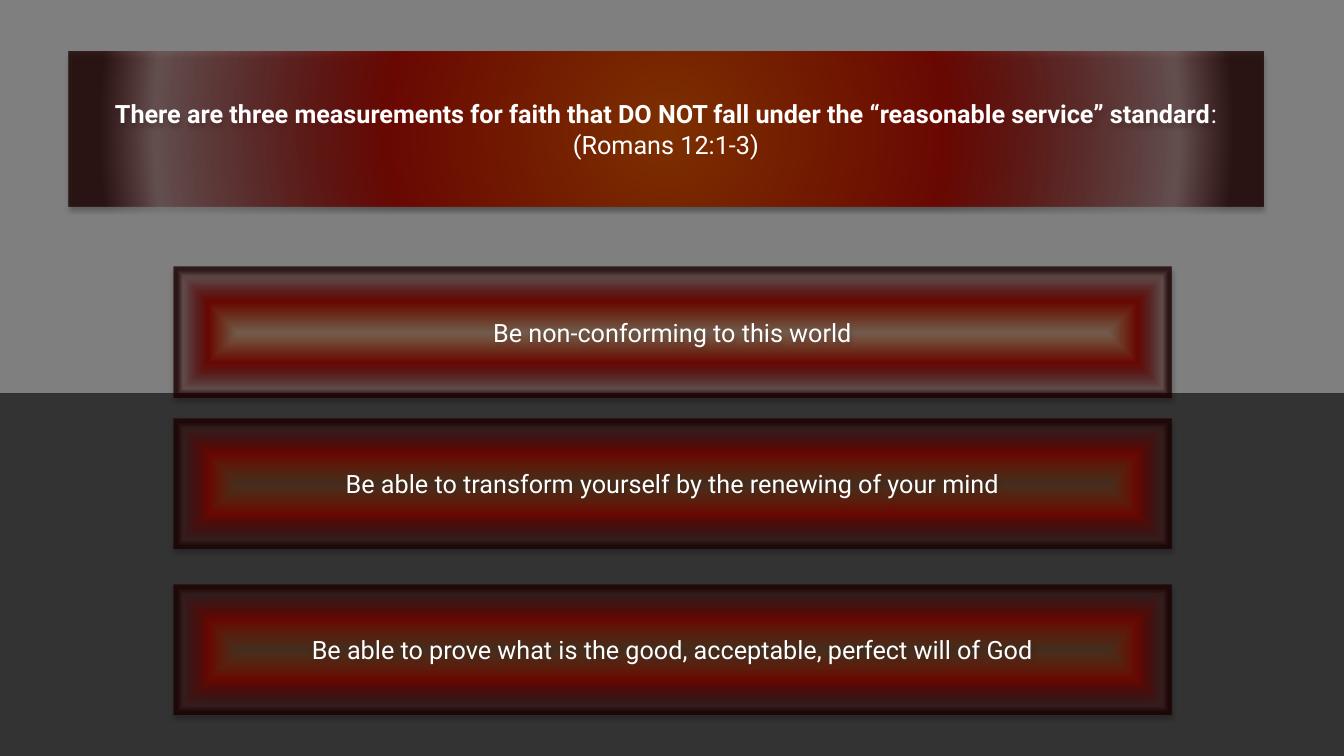
import lxml.etree
import pptx
import pptx.dml.color
import pptx.enum.shapes
import pptx.enum.text
import pptx.oxml
import pptx.oxml.ns
import pptx.util

BLACK = pptx.dml.color.RGBColor(0x00, 0x00, 0x00)
WHITE = pptx.dml.color.RGBColor(0xFF, 0xFF, 0xFF)
AMBER = pptx.dml.color.RGBColor(0x7D, 0x30, 0x00)
RED = pptx.dml.color.RGBColor(0x69, 0x08, 0x02)
MAROON = pptx.dml.color.RGBColor(0x43, 0x00, 0x00)
DARK = pptx.dml.color.RGBColor(0x1B, 0x00, 0x00)

OUTER_STOPS = [(46, RED, 100), (85, MAROON, 30), (94, DARK, 78)]
TITLE_STOPS = [(0, AMBER, 100)] + OUTER_STOPS
PANEL_STOPS = [(0, AMBER, 29)] + OUTER_STOPS

MEASUREMENTS = [
    (35.33, "Be non-conforming to this world"),
    (55.33, "Be able to transform yourself by the renewing of your mind"),
    (77.33, "Be able to prove what is the good, acceptable, perfect will of God"),
]


class FaithSlide:
    """Holds the style and the current page, with lengths in percent of the page."""

    font_name = "Roboto"
    font_size = pptx.util.Pt(18)

    def __init__(self, deck):
        self.width, self.height = deck.slide_width, deck.slide_height
        self.page = deck.slides.add_slide(deck.slide_layouts[5])

    def place(self, left, top, width, height):
        return (
            round(self.width * left / 100),
            round(self.height * top / 100),
            round(self.width * width / 100),
            round(self.height * height / 100),
        )

    def rectangle(self, *area):
        box = self.page.shapes.add_shape(
            pptx.enum.shapes.MSO_SHAPE.RECTANGLE, *self.place(*area)
        )
        box.line.fill.background()
        box.shadow.inherit = False
        return box

    def band(self, top, height, opacity):
        box = self.rectangle(0, top, 100, height)
        box.fill.solid()
        box.fill.fore_color.rgb = BLACK
        color = box.element.spPr.find(".//" + pptx.oxml.ns.qn("a:srgbClr"))
        alpha = lxml.etree.SubElement(color, pptx.oxml.ns.qn("a:alpha"))
        alpha.set("val", str(opacity * 1000))

    def glow(self, box, stops, shape):
        namespace = pptx.oxml.ns.nsdecls("a")
        stop_xml = "".join(
            f'<a:gs pos="{position * 1000}"><a:srgbClr val="{color}">'
            f'<a:alpha val="{opacity * 1000}"/></a:srgbClr></a:gs>'
            for position, color, opacity in stops
        )
        gradient = pptx.oxml.parse_xml(
            f'<a:gradFill {namespace} rotWithShape="1"><a:gsLst>{stop_xml}</a:gsLst>'
            f'<a:path path="{shape}"><a:fillToRect l="50000" t="50000" '
            'r="50000" b="50000"/></a:path></a:gradFill>'
        )
        shadow = pptx.oxml.parse_xml(
            f'<a:outerShdw {namespace} blurRad="{pptx.util.Pt(3.5)}" '
            f'dist="{pptx.util.Pt(2.2)}" dir="5400000" rotWithShape="0">'
            f'<a:srgbClr val="{BLACK}"><a:alpha val="32000"/></a:srgbClr></a:outerShdw>'
        )
        box.fill.background()
        properties = box.element.spPr
        properties.replace(properties.find(pptx.oxml.ns.qn("a:noFill")), gradient)
        box.shadow.inherit = False
        properties.find(pptx.oxml.ns.qn("a:effectLst")).append(shadow)

    def caption(self, box, lines):
        frame = box.text_frame
        frame.text = "\n".join(lines)
        frame.word_wrap = True
        frame.auto_size = pptx.enum.text.MSO_AUTO_SIZE.NONE
        frame.vertical_anchor = pptx.enum.text.MSO_ANCHOR.MIDDLE
        for para in frame.paragraphs:
            para.alignment = pptx.enum.text.PP_ALIGN.CENTER
            para.font.name = self.font_name
            para.font.size = self.font_size
            para.font.color.rgb = WHITE

    def title(self, area, heading, ending, reference):
        box = self.page.shapes.title
        box.left, box.top, box.width, box.height = self.place(*area)
        self.glow(box, TITLE_STOPS, "circle")
        self.caption(box, [heading, reference])
        para = box.text_frame.paragraphs[0]
        para.runs[0].font.bold = True
        span = para.add_run()
        span.text = ending
        box.element.getparent().append(box.element)

    def panel(self, top, text):
        box = self.rectangle(12.9, top, 74.27, 17.2)
        self.glow(box, PANEL_STOPS, "rect")
        self.caption(box, [text])


def main():
    deck = pptx.Presentation()
    deck.slide_width = pptx.util.Inches(13.33)
    deck.slide_height = pptx.util.Inches(7.5)
    slide = FaithSlide(deck)
    slide.band(0, 52, 50)
    slide.band(52, 48, 80)
    slide.title(
        (5.1, 6.8, 88.9, 20.53),
        "There are three measurements for faith that DO NOT fall under "
        "the “reasonable service” standard",
        ":",
        "(Romans 12:1-3)",
    )
    for top, text in MEASUREMENTS:
        slide.panel(top, text)
    deck.save("out.pptx")


if __name__ == "__main__":
    main()
